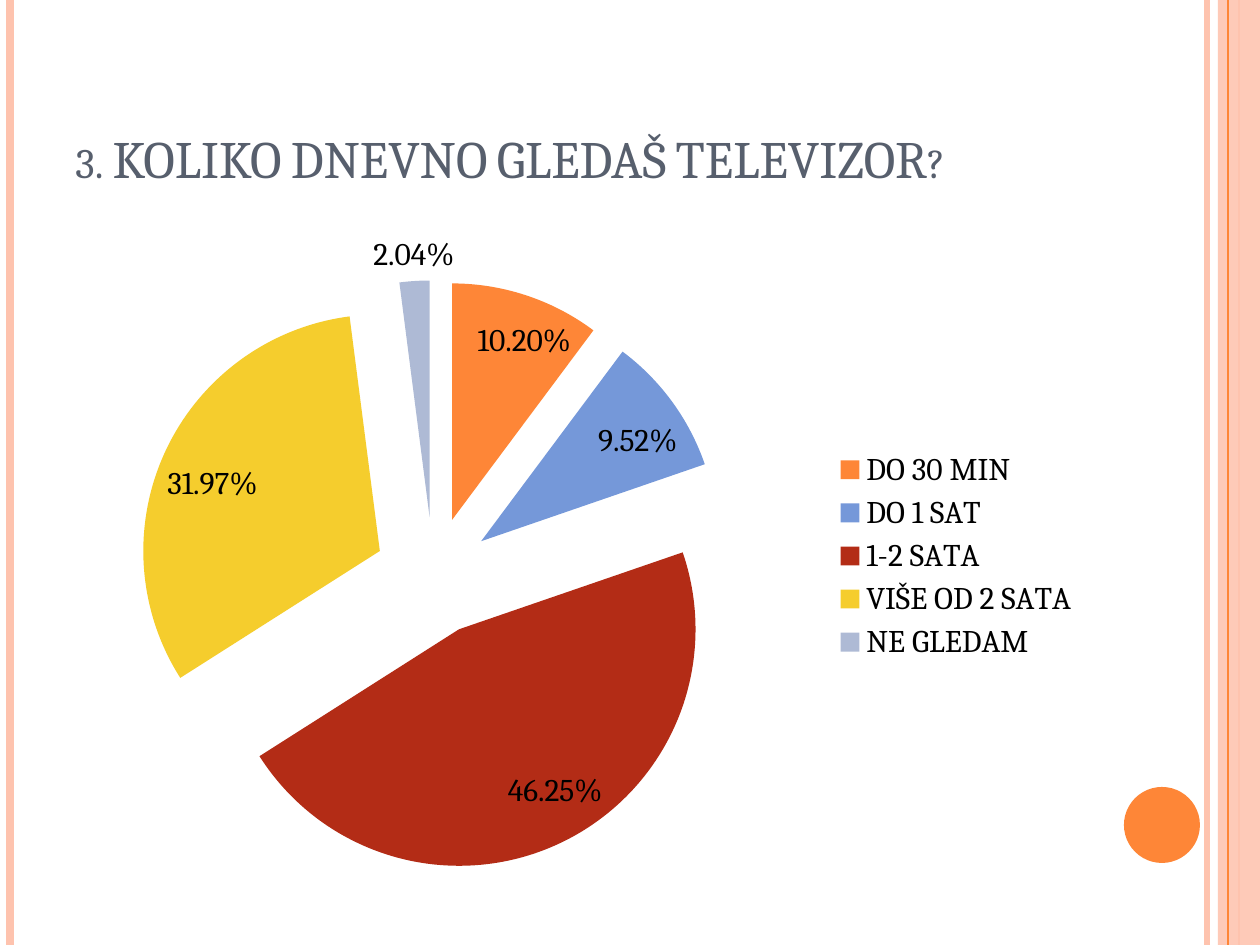
"""Build a slide with a pie chart of daily television viewing."""
from lxml.etree import SubElement
from pptx import Presentation
from pptx.chart.data import CategoryChartData
from pptx.dml.color import RGBColor
from pptx.enum.chart import XL_CHART_TYPE, XL_LABEL_POSITION, XL_LEGEND_POSITION
from pptx.enum.shapes import MSO_CONNECTOR, MSO_SHAPE
from pptx.enum.text import MSO_ANCHOR
from pptx.oxml.ns import qn
from pptx.util import Emu, Pt

FONT = "Cambria"
ORANGE, PEACH = "FE8637", "FEC3AE"


def px(count):
    return Emu(round(count * 914400 / 126))


def paint(color_format, value, opacity=100):
    color_format.rgb = RGBColor.from_string(value)
    if opacity < 100:
        color = color_format._xFill.find(qn("a:srgbClr"))
        SubElement(color, qn("a:alpha"), val=str(opacity * 1000))


deck = Presentation()
deck.slide_width, deck.slide_height = px(1260), px(945)
page = deck.slides.add_slide(deck.slide_layouts[6])

band = page.shapes.add_shape(MSO_SHAPE.RECTANGLE, px(1218), 0, px(42), px(945))
dot = page.shapes.add_shape(MSO_SHAPE.OVAL, px(1124), px(787), px(76), px(76))
for shape, color, opacity in [(band, PEACH, 87), (dot, ORANGE, 100)]:
    shape.shadow.inherit = False
    shape.line.fill.background()
    shape.fill.solid()
    paint(shape.fill.fore_color, color)
    if opacity < 100:
        tint = shape.fill._xPr.find(qn("a:solidFill")).find(qn("a:srgbClr"))
        SubElement(tint, qn("a:alpha"), val=str(opacity * 1000))

for left, color, width in [
    (1207, PEACH, 3),
    (10, PEACH, 4.5),
    (1239, PEACH, 1.5),
    (1228, ORANGE, 0.75),
]:
    stripe = page.shapes.add_connector(MSO_CONNECTOR.STRAIGHT, px(left), 0, px(left), px(945))
    stripe.line.width = Pt(width)
    paint(stripe.line.color, color)
    SubElement(stripe._element.spPr, qn("a:effectLst"))

box = page.shapes.add_textbox(px(63), px(38), px(1029), px(157))
frame = box.text_frame
frame.word_wrap = True
frame.vertical_anchor = MSO_ANCHOR.BOTTOM
para = frame.paragraphs[0]
span = para.add_run()
span.text = "3. KOLIKO DNEVNO GLEDAŠ TELEVIZOR?"
span.font.name = FONT
span.font.size = Pt(30)
paint(span.font.color, "575F6D")
span.font._element.set("cap", "small")

slices = [
    ("DO 30 MIN", 0.102, ORANGE),
    ("DO 1 SAT", 0.0952, "7598D9"),
    ("1-2 SATA", 0.4625, "B32C16"),
    ("VIŠE OD 2 SATA", 0.3197, "F5CD2D"),
    ("NE GLEDAM", 0.0204, "AEBAD5"),
]
data = CategoryChartData(number_format="0.00%")
data.categories = [name for name, value, color in slices]
data.add_series("Series 1", [value for name, value, color in slices])
chart = page.shapes.add_chart(
    XL_CHART_TYPE.PIE, px(63), px(220), px(1029), px(672), data
).chart
chart.has_title = False
chart.font.name = FONT
chart.font.size = Pt(18)
paint(chart.font.color, "000000")
chart.has_legend = True
chart.legend.position = XL_LEGEND_POSITION.RIGHT
chart.legend.include_in_layout = False

plot = chart.plots[0]
plot.vary_by_categories = True
plot.has_data_labels = True
labels = plot.data_labels
labels.show_value = True
labels.number_format = "0.00%"
labels.number_format_is_linked = False
labels.position = XL_LABEL_POSITION.BEST_FIT

series = plot.series[0]
for index, (name, value, color) in enumerate(slices):
    fill = series.points[index].format.fill
    fill.solid()
    paint(fill.fore_color, color)
explosion = series._element.makeelement(qn("c:explosion"), {"val": "25"})
series._element.find(qn("c:dPt")).addprevious(explosion)
for point in series._element.findall(qn("c:dPt")):
    point.find(qn("c:spPr")).addprevious(point.makeelement(qn("c:explosion"), {"val": "25"}))

area = chart._chartSpace.chart.plotArea
for old in area.findall(qn("c:layout")):
    area.remove(old)
layout = area.makeelement(qn("c:layout"), {})
area.insert(0, layout)
manual = SubElement(layout, qn("c:manualLayout"))
for tag, setting in [
    ("layoutTarget", "inner"),
    ("xMode", "edge"),
    ("yMode", "edge"),
    ("x", "0.07"),
    ("y", "0.09"),
    ("w", "0.58"),
    ("h", "0.88"),
]:
    SubElement(manual, qn("c:" + tag), val=setting)

deck.save("out.pptx")
